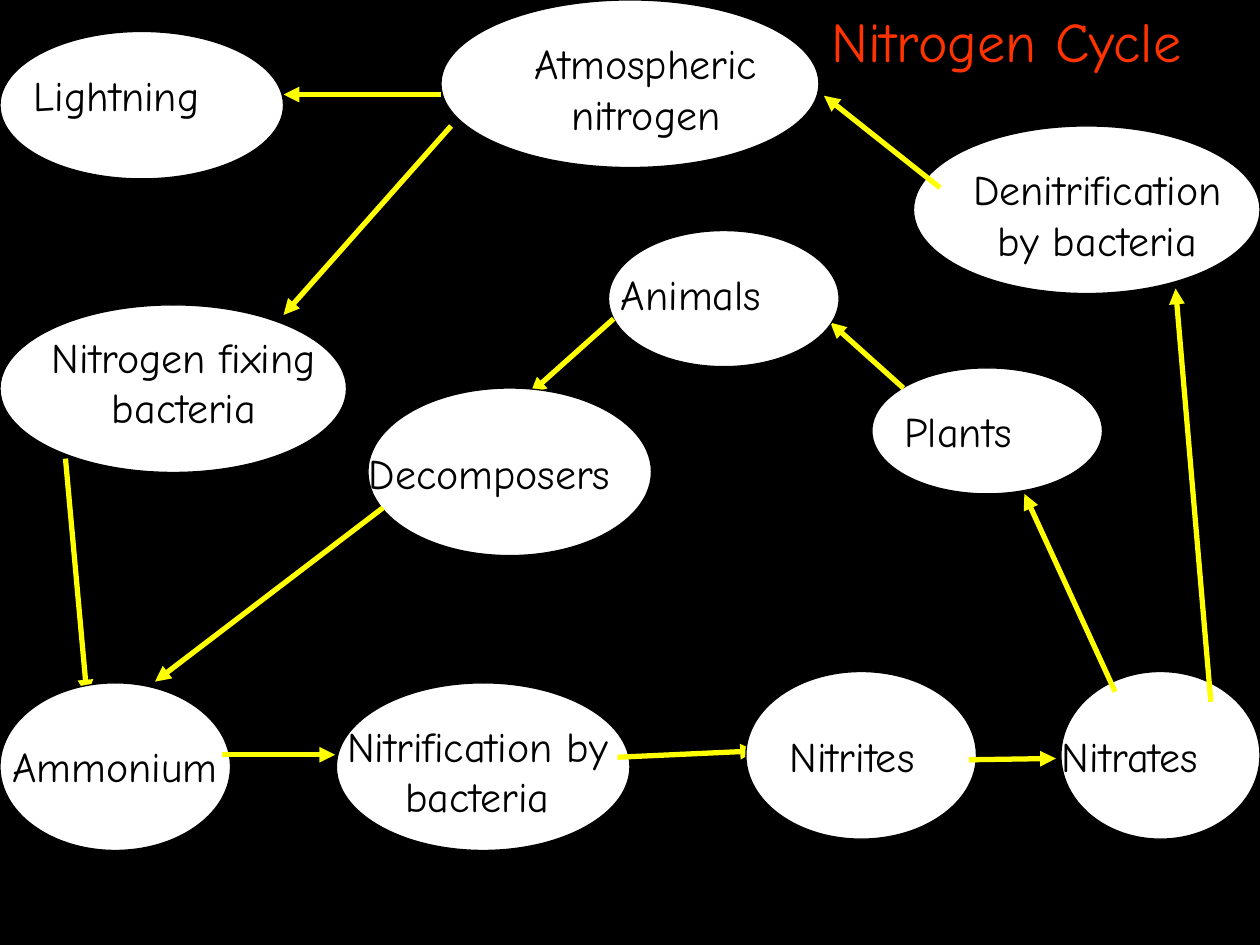
from typing import NamedTuple

from lxml.etree import SubElement
from pptx import Presentation
from pptx.dml.color import RGBColor
from pptx.enum.shapes import MSO_CONNECTOR as Connector, MSO_SHAPE as Preset
from pptx.enum.text import MSO_AUTO_SIZE as AutoSize, PP_ALIGN as Align
from pptx.oxml.ns import qn
from pptx.slide import Slide
from pptx.util import Inches, Pt

COLORS = {
    "background": "000000",
    "bubble": "FFFFFF",
    "text": "000000",
    "arrow": "FFFF00",
    "title": "FF3300",
}
FONT = "Comic Neue"
LABEL_SIZE = 24
TITLE_SIZE = 32
ONE_LINE, TWO_LINES = 0.5, 0.9


class Box(NamedTuple):
    left: float
    top: float
    width: float
    height: float


class Arrow(NamedTuple):
    start_x: float
    start_y: float
    end_x: float
    end_y: float


class Stage(NamedTuple):
    label: str
    bubble: Box
    label_box: Box
    arrows: tuple[Arrow, ...] = ()


STAGES = [
    Stage("Atmospheric nitrogen", Box(3.5, 0, 3, 1.33), Box(4, 0.25, 2.25, TWO_LINES),
          (Arrow(3.58, 1, 2.25, 2.5), Arrow(3.5, 0.75, 2.25, 0.75))),
    Stage("Lightning", Box(0, 0.25, 2.25, 1.17), Box(0.17, 0.5, 1.92, ONE_LINE)),
    Stage("Nitrogen fixing bacteria", Box(0, 2.42, 2.75, 1.33), Box(0.17, 2.58, 2.58, TWO_LINES),
          (Arrow(0.52, 3.64, 0.69, 5.52),)),
    Stage("Ammonium", Box(0, 5.42, 1.83, 1.33), Box(0, 5.83, 2.17, ONE_LINE),
          (Arrow(1.76, 5.99, 2.66, 5.99),)),
    Stage("Nitrification by bacteria", Box(2.67, 5.42, 2.33, 1.33), Box(2.5, 5.67, 2.58, TWO_LINES),
          (Arrow(4.9, 6.01, 6, 5.96),)),
    Stage("Nitrites", Box(5.92, 5.33, 1.83, 1.33), Box(6.17, 5.75, 1.5, ONE_LINE),
          (Arrow(7.69, 6.03, 8.38, 6.02),)),
    Stage("Nitrates", Box(8.42, 5.33, 1.58, 1.33), Box(8.33, 5.75, 1.67, ONE_LINE),
          (Arrow(8.85, 5.49, 8.13, 3.92), Arrow(9.61, 5.57, 9.33, 2.29))),
    Stage("Denitrification by bacteria", Box(7.25, 1, 2.75, 1.33), Box(7.42, 1.25, 2.58, TWO_LINES),
          (Arrow(7.46, 1.49, 6.54, 0.76),)),
    Stage("Plants", Box(6.92, 2.92, 1.83, 1), Box(7.08, 3.17, 1.5, ONE_LINE),
          (Arrow(7.17, 3.08, 6.59, 2.56),)),
    Stage("Animals", Box(4.83, 1.83, 1.83, 1.08), Box(4.83, 2.08, 1.5, ONE_LINE),
          (Arrow(4.87, 2.53, 4.21, 3.12),)),
    Stage("Decomposers", Box(2.92, 3.08, 2.25, 1.33), Box(2.83, 3.5, 2.25, ONE_LINE),
          (Arrow(3.04, 4.03, 1.23, 5.41),)),
]


def color(key: str) -> RGBColor:
    return RGBColor.from_string(COLORS[key])


def set_attributes(target: object, values: dict[str, object]) -> None:
    for attribute, value in values.items():
        setattr(target, attribute, value)


def draw_bubble(slide: Slide, box: Box) -> None:
    bubble = slide.shapes.add_shape(Preset.OVAL, *map(Inches, box))
    bubble.shadow.inherit = False
    bubble.fill.solid()
    bubble.fill.fore_color.rgb = color("bubble")
    bubble.line.color.rgb = color("text")
    bubble.line.width = Pt(0.75)


def draw_text(slide: Slide, text: str, box: Box, size: int, color_key: str) -> None:
    frame = slide.shapes.add_textbox(*map(Inches, box)).text_frame
    set_attributes(frame, {"word_wrap": True, "auto_size": AutoSize.SHAPE_TO_FIT_TEXT})
    paragraph = frame.paragraphs[0]
    alignment = Align.CENTER if box.height == TWO_LINES else Align.LEFT
    set_attributes(paragraph, {"alignment": alignment, "space_before": Pt(size / 2)})
    run = paragraph.add_run()
    run.text = text
    set_attributes(run.font, {"name": FONT, "size": Pt(size)})
    run.font.color.rgb = color(color_key)


def draw_arrow(slide: Slide, arrow: Arrow) -> None:
    connector = slide.shapes.add_connector(Connector.STRAIGHT, *map(Inches, arrow))
    connector.line.color.rgb = color("arrow")
    connector.line.width = Pt(3)
    SubElement(connector.line._get_or_add_ln(), qn("a:tailEnd"), type="triangle")
    SubElement(connector._element.spPr, qn("a:effectLst"))


def draw_stage(slide: Slide, stage: Stage) -> None:
    draw_bubble(slide, stage.bubble)
    draw_text(slide, stage.label, stage.label_box, LABEL_SIZE, "text")
    for arrow in stage.arrows:
        draw_arrow(slide, arrow)


def main() -> None:
    presentation = Presentation()
    set_attributes(presentation, {"slide_width": Inches(10), "slide_height": Inches(7.5)})
    slide = presentation.slides.add_slide(presentation.slide_layouts[6])
    slide.background.fill.solid()
    slide.background.fill.fore_color.rgb = color("background")
    for stage in STAGES:
        draw_stage(slide, stage)
    draw_text(slide, "Nitrogen Cycle", Box(6.5, 0, 3.5, 0.63), TITLE_SIZE, "title")
    presentation.save("out.pptx")


if __name__ == "__main__":
    main()
